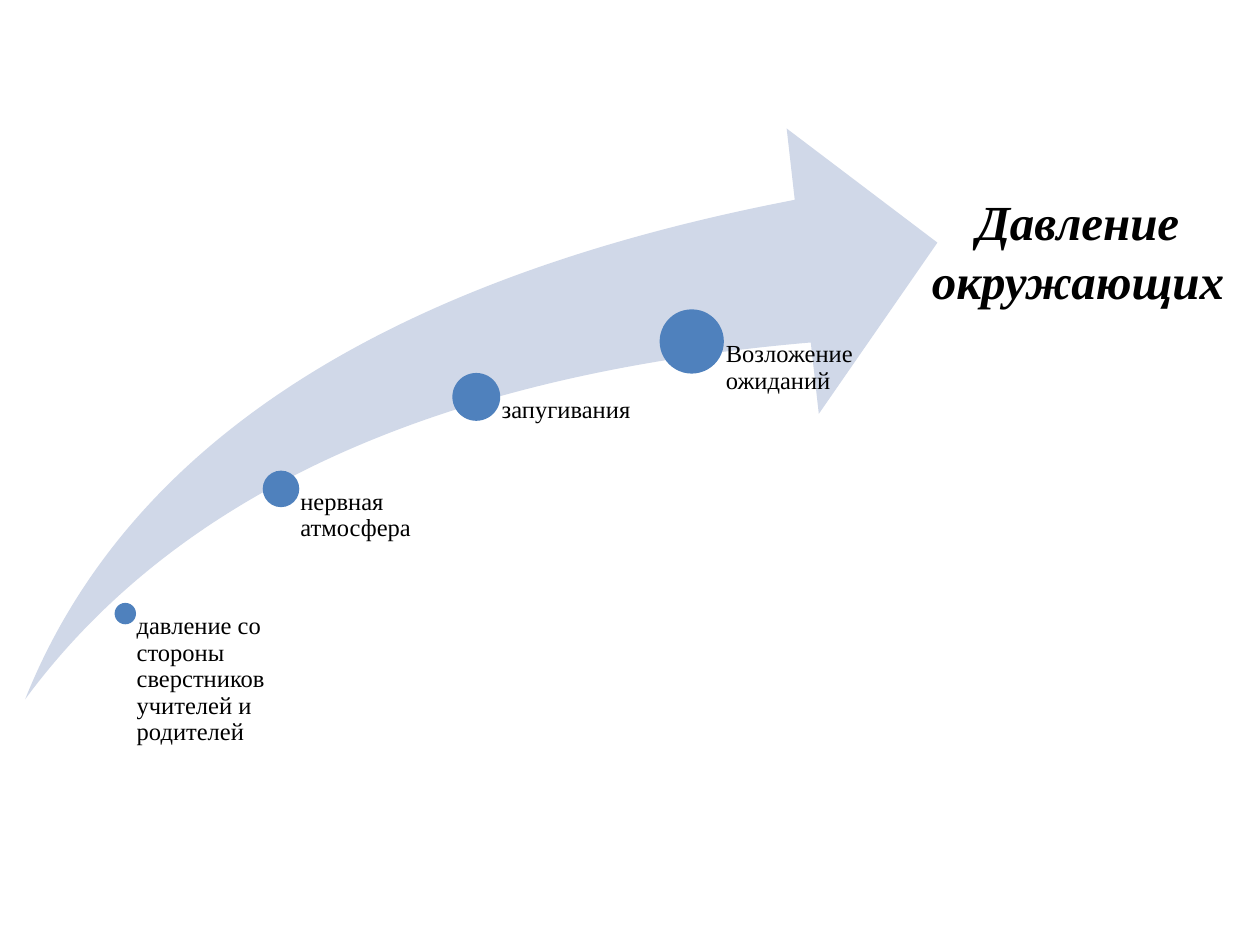
import pptx
import pptx.util
import pptx.dml.color
import pptx.enum.shapes
import pptx.enum.text

# Grid: 100 columns by 75 rows
COLS, ROWS = 100, 75
WIDE, HIGH = pptx.util.Inches(10), pptx.util.Inches(7.5)
UNIT = WIDE / COLS
FLOOR = 59.5  # row where all step labels end
HUES = {"swoosh": "D0D8E8", "dot": "4F81BD", "text": "000000"}
FONT = "Times New Roman"
KINDS = pptx.enum.shapes.MSO_SHAPE
ALIGN = pptx.enum.text.PP_ALIGN

# Centre column, centre row, dot size, label width, label
STEPS = [
    (9.95, 48.7, 1.7, 12.4, "давление со стороны сверстников учителей и родителей"),
    (22.3, 38.8, 2.9, 15.2, "нервная атмосфера"),
    (37.8, 31.5, 3.8, 15.2, "запугивания"),
    (54.9, 27.1, 5.1, 15.2, "Возложение ожиданий"),
]


def grid(*cells):
    return [round(cell * UNIT) for cell in cells]


def add_form(slide, kind, box, hue):
    form = slide.shapes.add_shape(kind, *grid(*box))
    form.shadow.inherit = False
    form.fill.solid()
    form.fill.fore_color.rgb = pptx.dml.color.RGBColor.from_string(HUES[hue])
    form.line.fill.background()
    return form


def add_text(slide, text, box, size=14, bold=False, slant=False,
             align=ALIGN.LEFT, space=1.0, after=0, pads=(0, 0, 0, 0)):
    frame = slide.shapes.add_textbox(*grid(*box)).text_frame
    frame.word_wrap = True
    (frame.margin_left, frame.margin_top,
     frame.margin_right, frame.margin_bottom) = grid(*pads)
    para = frame.paragraphs[0]
    para.alignment = align
    para.line_spacing = space
    para.space_after = pptx.util.Pt(after)
    run = para.add_run()
    run.text = text
    font = run.font
    font.name, font.size = FONT, pptx.util.Pt(size)
    font.bold, font.italic = bold, slant
    font.color.rgb = pptx.dml.color.RGBColor.from_string(HUES["text"])


def add_step(slide, col, row, size, width, label):
    # The label starts at the dot's centre and is indented past its edge
    add_form(slide, KINDS.OVAL, (col - size / 2, row - size / 2, size, size), "dot")
    add_text(slide, label, (col, row, width, FLOOR - row),
             space=0.9, after=4.9, pads=(0.53 * size, 0, 0, 0))


def main():
    deck = pptx.Presentation()
    deck.slide_width, deck.slide_height = WIDE, HIGH
    slide = deck.slides.add_slide(deck.slide_layouts[6])

    # Rising arrow
    swoosh = add_form(slide, KINDS.SWOOSH_ARROW, (2, 10.2, 72.4, 45.3), "swoosh")
    swoosh.adjustments[0] = swoosh.adjustments[1] = 0.25

    # Steps along the arrow
    for step in STEPS:
        add_step(slide, *step)

    # Heading at the tip
    add_text(slide, "Давление окружающих", (72.8, 14.7, 25.5, 10.3), size=28,
             bold=True, slant=True, align=ALIGN.CENTER, pads=(1, 0.5, 1, 0.5))

    deck.save("out.pptx")


if __name__ == "__main__":
    main()
